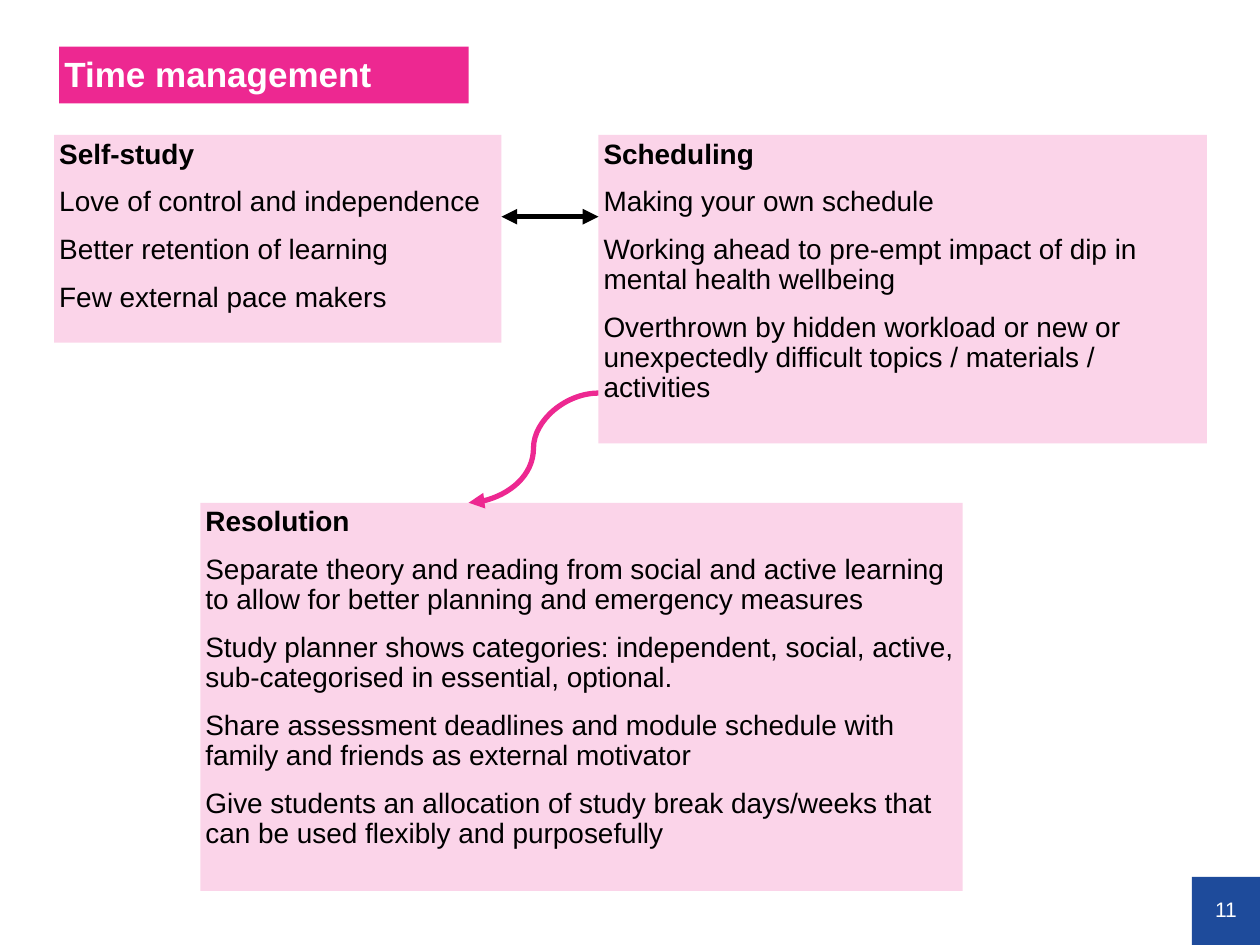
from pptx import Presentation
from pptx.dml.color import RGBColor as Rgb
from pptx.enum.shapes import MSO_CONNECTOR as Link, MSO_SHAPE as Shape
from pptx.enum.text import MSO_ANCHOR as Anchor, MSO_AUTO_SIZE as Fit, PP_ALIGN as Align
from pptx.oxml.ns import qn
from pptx.util import Inches, Pt
from lxml.etree import SubElement as Sub

WIDE, HIGH = Inches(10), Inches(7.5)
COLS, ROWS = 100, 75
PAD = 0.04
HUES = {
    "pink": "ED2891",
    "pale": "FBD4E9",
    "blue": "1E4B9B",
    "ink": "000000",
    "white": "FFFFFF",
}

TITLE = (4.7, 3.7, 32.5, 4.5)
STUDY = (4.3, 10.7, 35.5, 16.5)
PLAN = (47.5, 10.7, 48.3, 24.5)
SOLVE = (15.9, 39.9, 60.5, 30.8)
BADGE = (94.6, 69.6, 5.4, 5.4)

CARDS = [
    (STUDY, "Self-study", [
        "Love of control and independence",
        "Better retention of learning",
        "Few external pace makers",
    ]),
    (PLAN, "Scheduling", [
        "Making your own schedule",
        "Working ahead to pre-empt impact of dip in mental health wellbeing",
        "Overthrown by hidden workload or new or unexpectedly difficult topics / materials / activities",
    ]),
    (SOLVE, "Resolution", [
        "Separate theory and reading from social and active learning to allow for better planning and emergency measures",
        "Study planner shows categories: independent, social, active, sub-categorised in essential, optional.",
        "Share assessment deadlines and module schedule with family and friends as external motivator",
        "Give students an allocation of study break days/weeks that can be used flexibly and purposefully",
    ]),
]


def hue(name):
    return Rgb.from_string(HUES[name])


def spot(col, row):
    return round(WIDE * col / COLS), round(HIGH * row / ROWS)


def paint(item, name):
    item.fill.solid()
    item.fill.fore_color.rgb = hue(name)
    item.line.fill.background()


def block(slide, box, name):
    col, row, cols, rows = box
    item = slide.shapes.add_shape(Shape.RECTANGLE, *spot(col, row), *spot(cols, rows))
    item.shadow.inherit = False
    paint(item, name)
    return item


def frame(item, pads, anchor):
    text = item.text_frame
    text.word_wrap = True
    text.auto_size = Fit.NONE
    text.vertical_anchor = anchor
    (text.margin_left, text.margin_top,
     text.margin_right, text.margin_bottom) = map(Inches, pads)
    return text


def style(para, size, name, bold=False, align=Align.LEFT):
    para.alignment = align
    para.line_spacing = 0.9
    for run in para.runs:
        font = run.font
        font.name, font.size, font.bold = "Arial", Pt(size), bold
        font.color.rgb = hue(name)


def heading(slide, box):
    item = slide.shapes.title
    col, row, cols, rows = box
    item.left, item.top = spot(col, row)
    item.width, item.height = spot(cols, rows)
    paint(item, "pink")
    text = frame(item, (PAD, PAD / 2, 0, 0), Anchor.MIDDLE)
    text.text = "Time management"
    style(text.paragraphs[0], 20, "white", True)


def card(slide, box, head, lines):
    text = frame(block(slide, box, "pale"), [PAD] * 4, Anchor.TOP)
    text.text = "\n".join([head, *lines])
    for rank, para in enumerate(text.paragraphs):
        style(para, 16, "ink", rank == 0)
        para.space_before = Pt(10 if rank else 0)


def badge(slide, box):
    text = frame(block(slide, box, "blue"), [0] * 4, Anchor.MIDDLE)
    text.text = "11"
    style(text.paragraphs[0], 12, "white", align=Align.CENTER)


def arrow(slide, kind, start, end, name, tips):
    link = slide.shapes.add_connector(kind, *spot(*start), *spot(*end))
    link.line.width = Pt(3)
    link.line.color.rgb = hue(name)
    stroke = link.line._get_or_add_ln()
    for tip in tips:
        Sub(stroke, qn(f"a:{tip}"), type="triangle")
    Sub(link._element.spPr, qn("a:effectLst"))


def links(slide, study, plan, solve, title):
    edge = plan[0]
    mid = study[1] + 6.5
    arrow(slide, Link.STRAIGHT, (study[0] + study[2], mid), (edge, mid),
          "ink", ["headEnd", "tailEnd"])
    low = plan[1] + plan[3] - 4
    arrow(slide, Link.CURVE, (edge, low), (title[0] + title[2], solve[1]),
          "pink", ["tailEnd"])


def main():
    deck = Presentation()
    deck.slide_width, deck.slide_height = WIDE, HIGH
    slide = deck.slides.add_slide(deck.slide_layouts[5])
    badge(slide, BADGE)
    heading(slide, TITLE)
    for box, head, lines in CARDS:
        card(slide, box, head, lines)
    links(slide, STUDY, PLAN, SOLVE, TITLE)
    deck.save("out.pptx")


if __name__ == "__main__":
    main()
